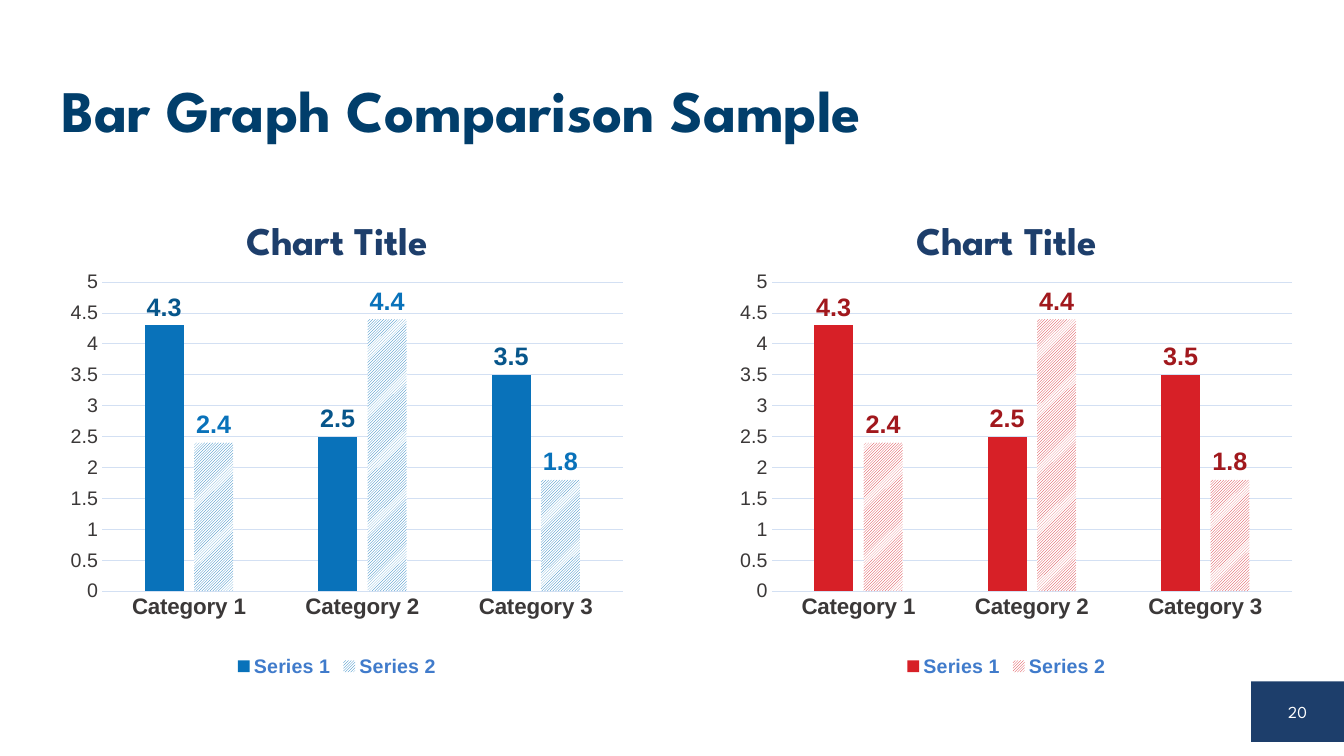
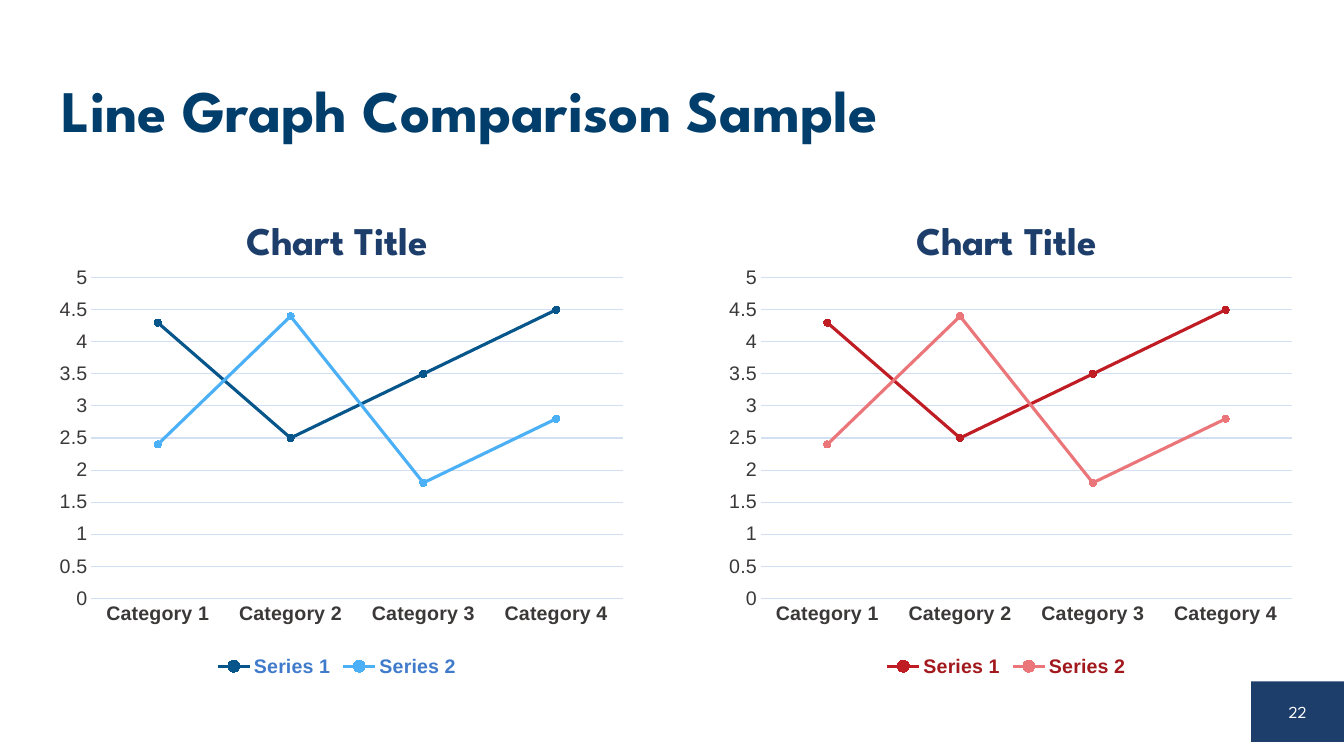
from lxml.etree import SubElement
from pptx import Presentation
from pptx.chart.data import CategoryChartData
from pptx.dml.color import RGBColor
from pptx.enum.chart import (XL_CHART_TYPE, XL_LABEL_POSITION, XL_LEGEND_POSITION,
                             XL_MARKER_STYLE, XL_TICK_MARK)
from pptx.enum.dml import MSO_PATTERN
from pptx.enum.shapes import MSO_SHAPE
from pptx.enum.text import MSO_ANCHOR, PP_ALIGN
from pptx.oxml.ns import qn
from pptx.util import Inches, Pt

# Colours and fonts
WHITE = RGBColor(0xFF, 0xFF, 0xFF)
NAVY = RGBColor(0x1D, 0x3E, 0x6B)
TITLE_BLUE = RGBColor(0x01, 0x3E, 0x6B)
CHARCOAL = RGBColor(0x3B, 0x38, 0x38)
GRID_BLUE = RGBColor(0xD3, 0xE0, 0xF3)
LEGEND_BLUE = RGBColor(0x40, 0x7B, 0xCB)
BLUE = RGBColor(0x09, 0x72, 0xBA)
DARK_BLUE = RGBColor(0x07, 0x56, 0x8B)
LIGHT_BLUE = RGBColor(0x4B, 0xB0, 0xF6)
RED = RGBColor(0xD7, 0x20, 0x27)
DARK_RED = RGBColor(0xA1, 0x18, 0x1D)
LINE_RED = RGBColor(0xBF, 0x1C, 0x23)
LIGHT_RED = RGBColor(0xEB, 0x76, 0x7A)
HEADING_FONT, LABEL_FONT, CHART_FONT = "League Spartan", "Arial", "Cabin"

# Content
CHART_TITLE = "Chart Title"
SERIES = {"Series 1": (4.3, 2.5, 3.5, 4.5), "Series 2": (2.4, 4.4, 1.8, 2.8)}
SLIDES = [
    {"title": "Bar Graph Comparison Sample", "number": "20",
     "type": XL_CHART_TYPE.COLUMN_CLUSTERED, "categories": 3, "category_size": 16,
     "plot": (0.089, 0.168, 0.911, 0.644),
     "charts": [
         {"series": (BLUE, BLUE), "labels": (DARK_BLUE, BLUE), "legend": LEGEND_BLUE},
         {"series": (RED, RED), "labels": (DARK_RED, DARK_RED), "legend": LEGEND_BLUE}]},
    {"title": "Line Graph Comparison Sample", "number": "22",
     "type": XL_CHART_TYPE.LINE_MARKERS, "categories": 4, "category_size": 14,
     "plot": (0.07, 0.159, 0.93, 0.668),
     "charts": [
         {"series": (DARK_BLUE, LIGHT_BLUE), "legend": LEGEND_BLUE},
         {"series": (LINE_RED, LIGHT_RED), "legend": DARK_RED}]},
]

# Grid, in inches
SLIDE_WIDTH, SLIDE_HEIGHT = 13.33, 7.5
MARGIN = 0.51
CONTENT_WIDTH = SLIDE_WIDTH - 2 * MARGIN
CHART_TOP, CHART_WIDTH, CHART_HEIGHT = 2, 5.67, 4.76
CHART_STEP = CONTENT_WIDTH - CHART_WIDTH
NUMBER_WIDTH, NUMBER_HEIGHT = 0.92, 0.6


def set_font(font, size, color, name=LABEL_FONT, bold=False):
    values = {"size": Pt(size), "name": name, "bold": bold}
    for attribute, value in values.items():
        setattr(font, attribute, value)
    font.color.rgb = color


def place(shape, left, top, width, height):
    box = {"left": left, "top": top, "width": width, "height": height}
    for attribute, value in box.items():
        setattr(shape, attribute, Inches(value))


def add_frame(slide, content):
    """Title and page number."""
    title = slide.shapes.title
    place(title, MARGIN, 0.4, CONTENT_WIDTH, 1.45)
    title.text_frame.text = content["title"]
    title.text_frame.vertical_anchor = MSO_ANCHOR.MIDDLE
    paragraph = title.text_frame.paragraphs[0]
    paragraph.alignment = PP_ALIGN.LEFT
    paragraph.line_spacing = 0.9
    set_font(paragraph.font, 42, TITLE_BLUE, HEADING_FONT, True)

    number = slide.shapes.add_shape(
        MSO_SHAPE.RECTANGLE, Inches(SLIDE_WIDTH - NUMBER_WIDTH),
        Inches(CHART_TOP + CHART_HEIGHT), Inches(NUMBER_WIDTH), Inches(NUMBER_HEIGHT))
    number.shadow.inherit = False
    number.fill.solid()
    number.fill.fore_color.rgb = NAVY
    number.line.fill.background()
    number.text_frame.text = content["number"]
    number.text_frame.vertical_anchor = MSO_ANCHOR.MIDDLE
    paragraph = number.text_frame.paragraphs[0]
    paragraph.alignment = PP_ALIGN.CENTER
    set_font(paragraph.font, 12, WHITE, HEADING_FONT)


def set_plot_layout(chart, shares):
    """Fix the inner plot area as shares of the chart."""
    plot_area = chart._chartSpace.chart.plotArea
    layout = plot_area.find(qn("c:layout"))
    if layout is None:
        layout = SubElement(plot_area, qn("c:layout"))
        plot_area.insert(0, layout)
    manual = SubElement(layout, qn("c:manualLayout"))
    settings = [("layoutTarget", "inner"), ("xMode", "edge"), ("yMode", "edge")]
    settings += zip("xywh", shares)
    for tag, value in settings:
        SubElement(manual, qn(f"c:{tag}")).set("val", str(value))


def format_axes(chart, category_size):
    category_axis, value_axis = chart.category_axis, chart.value_axis
    for axis in (category_axis, value_axis):
        axis.major_tick_mark = axis.minor_tick_mark = XL_TICK_MARK.NONE
    set_font(category_axis.tick_labels.font, category_size, CHARCOAL, bold=True)
    set_font(value_axis.tick_labels.font, 14, CHARCOAL)
    value_axis.minimum_scale, value_axis.maximum_scale = 0, 5
    value_axis.major_unit = 0.5
    value_axis.format.line.fill.background()
    for line in (category_axis.format.line, value_axis.major_gridlines.format.line):
        line.color.rgb = GRID_BLUE
        line.width = Pt(0.75)


def format_columns(plot, palette):
    plot.gap_width, plot.overlap = 219, -27
    for index, series in enumerate(plot.series):
        fill, color = series.format.fill, palette["series"][index]
        if index == 0:
            fill.solid()
        else:
            fill.patterned()
            fill.pattern = MSO_PATTERN.DARK_UPWARD_DIAGONAL
            fill.back_color.rgb = WHITE
        fill.fore_color.rgb = color
        labels = series.data_labels
        labels.show_value = True
        labels.position = XL_LABEL_POSITION.OUTSIDE_END
        set_font(labels.font, 18, palette["labels"][index], bold=True)


def format_lines(plot, palette):
    for series, color in zip(plot.series, palette["series"]):
        series.smooth = False
        series.format.line.color.rgb = color
        series.format.line.width = Pt(2.25)
        marker = series.marker
        marker.style, marker.size = XL_MARKER_STYLE.CIRCLE, 5
        marker.format.fill.solid()
        marker.format.fill.fore_color.rgb = color
        marker.format.line.color.rgb = color


def add_comparison_chart(slide, content, palette, left):
    count = content["categories"]
    data = CategoryChartData()
    data.categories = [f"Category {index + 1}" for index in range(count)]
    for name, values in SERIES.items():
        data.add_series(name, values[:count])
    chart = slide.shapes.add_chart(
        content["type"], Inches(left), Inches(CHART_TOP),
        Inches(CHART_WIDTH), Inches(CHART_HEIGHT), data).chart
    set_font(chart.font, 10, NAVY, CHART_FONT)

    chart.has_title = True
    chart.chart_title.include_in_layout = False
    chart.chart_title.text_frame.text = CHART_TITLE
    title_run = chart.chart_title.text_frame.paragraphs[0].runs[0]
    set_font(title_run.font, 28, NAVY, HEADING_FONT, True)

    chart.has_legend = True
    chart.legend.position = XL_LEGEND_POSITION.BOTTOM
    chart.legend.include_in_layout = False
    set_font(chart.legend.font, 14, palette["legend"], bold=True)

    set_plot_layout(chart, content["plot"])
    format_axes(chart, content["category_size"])
    plot = chart.plots[0]
    plot.vary_by_categories = False
    is_column = content["type"] == XL_CHART_TYPE.COLUMN_CLUSTERED
    format_series = format_columns if is_column else format_lines
    format_series(plot, palette)


def main():
    presentation = Presentation()
    presentation.slide_width = Inches(SLIDE_WIDTH)
    presentation.slide_height = Inches(SLIDE_HEIGHT)
    title_only = presentation.slide_layouts[5]
    for content in SLIDES:
        slide = presentation.slides.add_slide(title_only)
        add_frame(slide, content)
        for column, palette in enumerate(content["charts"]):
            add_comparison_chart(slide, content, palette, MARGIN + column * CHART_STEP)
    presentation.save("out.pptx")


if __name__ == "__main__":
    main()
